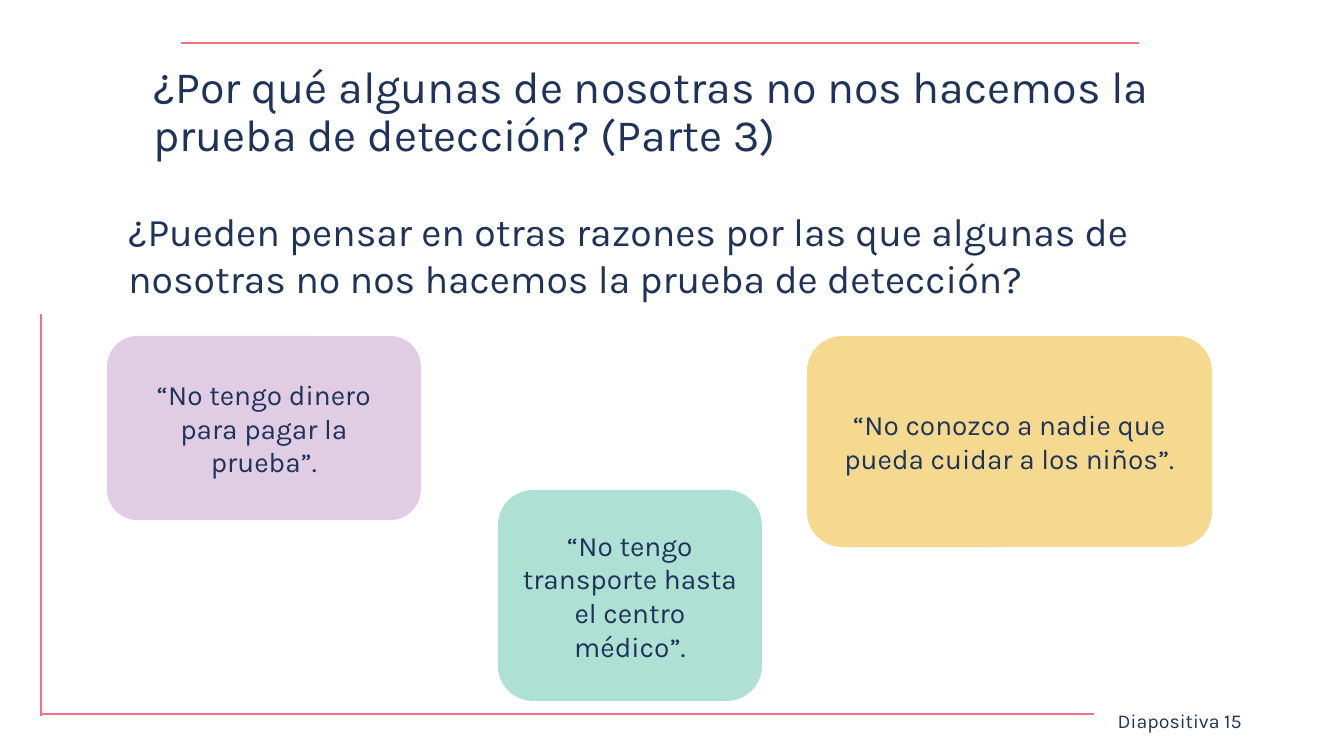
"""Builds the slide about reasons for not getting screened."""
from lxml import etree
from pptx import Presentation
from pptx.dml.color import RGBColor
from pptx.enum.shapes import MSO_CONNECTOR, MSO_SHAPE
from pptx.enum.text import MSO_ANCHOR, MSO_AUTO_SIZE, PP_ALIGN
from pptx.oxml.ns import qn
from pptx.util import Emu, Pt

STRAIGHT = MSO_CONNECTOR.STRAIGHT
ROUNDED = MSO_SHAPE.ROUNDED_RECTANGLE
TOP, MIDDLE = MSO_ANCHOR.TOP, MSO_ANCHOR.MIDDLE
NO_FIT = MSO_AUTO_SIZE.NONE
LEFT, CENTER, RIGHT = PP_ALIGN.LEFT, PP_ALIGN.CENTER, PP_ALIGN.RIGHT

NAVY = RGBColor(0x1E, 0x32, 0x5A)
CORAL = RGBColor(0xF0, 0x73, 0x7F)
LILAC = RGBColor(0xD9, 0xC0, 0xDD)
MINT = RGBColor(0x9A, 0xDA, 0xC8)
YELLOW = RGBColor(0xF3, 0xD0, 0x72)

FONT = "Karla"
PX = 914400 / 100.8
OPACITY = 80

TITLE = "¿Por qué algunas de nosotras no nos hacemos la prueba de detección? (Parte 3)"
QUESTION = ("¿Pueden pensar en otras razones por las que algunas de nosotras "
            "no nos hacemos la prueba de detección?")
SLIDE_LABEL = "Diapositiva 15"
TITLE_BOX = (93, 40, 1159, 146)
QUESTION_BOX = (93, 202, 1159, 480)
LABEL_BOX = (950, 701, 302, 40)
REASONS = [
    ("“No tengo dinero para pagar la prueba”.", LILAC, (107, 336, 314, 184)),
    ("“No tengo transporte hasta el centro médico”.", MINT, (498, 490, 264, 211)),
    ("“No conozco a nadie que pueda cuidar a los niños”.", YELLOW, (807, 336, 405, 211)),
]
RULES = [(41, 714, 1094, 714), (41, 716, 41, 314), (181, 43, 1139, 43)]


def px(*lengths):
    return [Emu(round(length * PX)) for length in lengths]


def place(holder, box):
    holder.left, holder.top, holder.width, holder.height = px(*box)


def write(holder, text, size, align, anchor=MIDDLE, indent=0):
    frame = holder.text_frame
    frame.word_wrap = True
    frame.auto_size = NO_FIT
    frame.vertical_anchor = anchor
    paragraph = frame.paragraphs[0]
    paragraph.alignment = align
    paragraph.space_before = Pt(0)
    if indent:
        properties = paragraph._p.get_or_add_pPr()
        properties.set("marL", str(px(indent)[0]))
        properties.set("indent", "0")
        etree.SubElement(properties, qn("a:buNone"))
    run = paragraph.add_run()
    run.text = text
    run.font.name = FONT
    run.font.size = Pt(size)
    run.font.color.rgb = NAVY
    return paragraph


def add_rule(shapes, ends):
    rule = shapes.add_connector(STRAIGHT, *px(*ends))
    rule.line.color.rgb = CORAL
    rule.line.width = Pt(1.5)
    etree.SubElement(rule._element.spPr, qn("a:effectLst"))


def add_reason(shapes, text, color, box):
    card = shapes.add_shape(ROUNDED, *px(*box))
    card.shadow.inherit = False
    card.fill.solid()
    card.fill.fore_color.rgb = color
    tint = card._element.spPr.find(qn("a:solidFill"))[0]
    etree.SubElement(tint, qn("a:alpha")).set("val", str(OPACITY * 1000))
    card.line.fill.background()
    write(card, text, 20, CENTER)


def main():
    deck = Presentation()
    deck.slide_width, deck.slide_height = px(1344, 756)
    slide = deck.slides.add_slide(deck.slide_layouts[1])
    shapes = slide.shapes
    title, question = shapes.title, slide.placeholders[1]

    for ends in RULES:
        add_rule(shapes, ends)

    place(title, TITLE_BOX)
    write(title, TITLE, 32, LEFT, indent=50).line_spacing = 0.9
    place(question, QUESTION_BOX)
    write(question, QUESTION, 28, LEFT, TOP, indent=25).space_after = Pt(14)

    write(shapes.add_textbox(*px(*LABEL_BOX)), SLIDE_LABEL, 14, RIGHT)
    for reason in REASONS:
        add_reason(shapes, *reason)

    deck.save("out.pptx")


if __name__ == "__main__":
    main()
